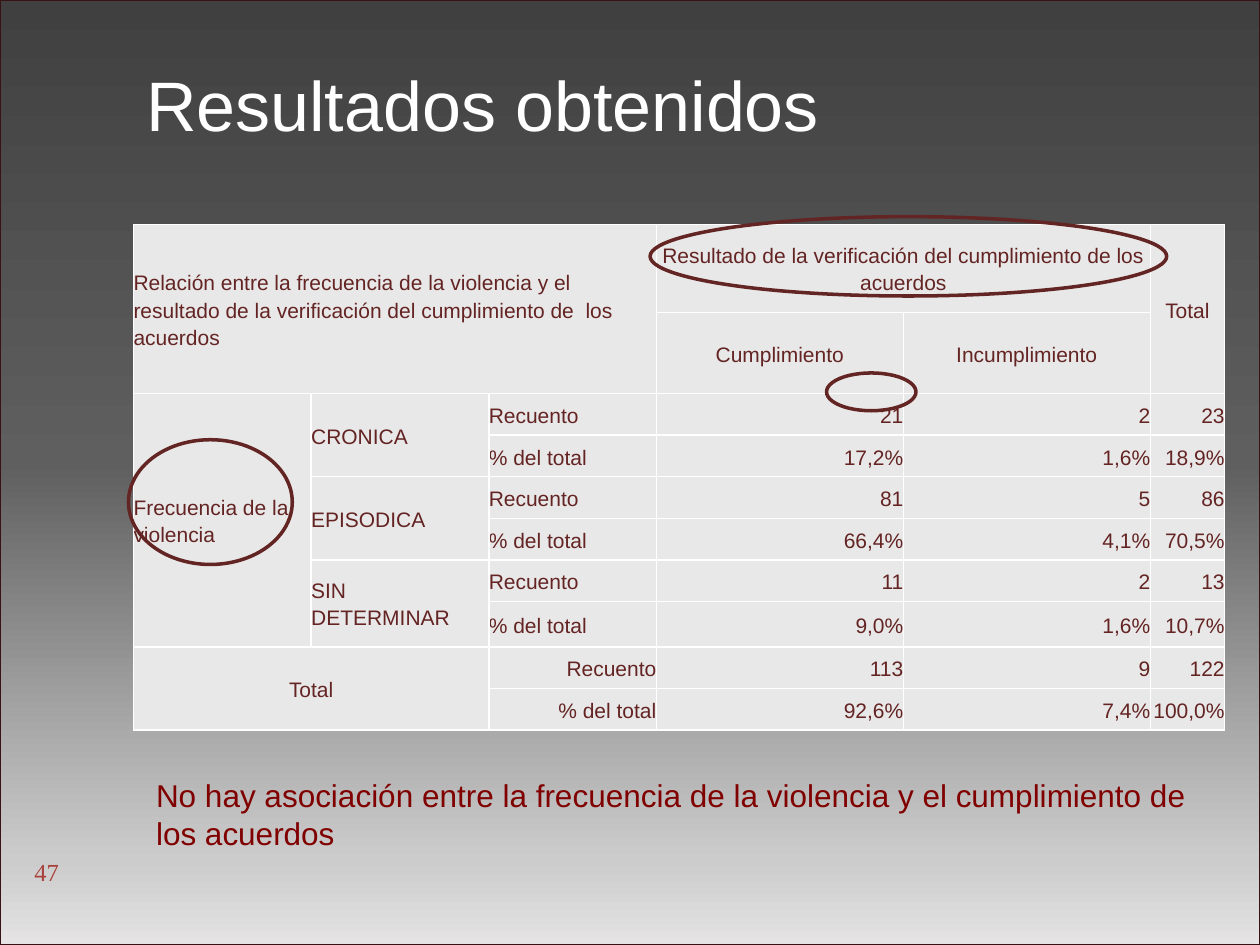
"""Builds the results slide: a cross table with circled headings and a conclusion."""
import dataclasses

import lxml.etree
import pptx
import pptx.dml.color
import pptx.enum.shapes
import pptx.enum.text
import pptx.oxml.ns
import pptx.util

ALIGN = pptx.enum.text.PP_ALIGN
ANCHOR = pptx.enum.text.MSO_ANCHOR
SHAPE = pptx.enum.shapes.MSO_SHAPE
qn = pptx.oxml.ns.qn


@dataclasses.dataclass(frozen=True)
class Theme:
    """Colours, fonts and type sizes of the slide."""
    gradient: tuple = ((0, "404040"), (49, "5F5F5F"), (91, "CCCCCC"), (100, "E5E3E3"))
    frame: str = "371413"
    cell: str = "E9E8E8"
    border: str = "FFFFFF"
    ring: str = "632523"
    title: tuple = ("Arial", 40, "FFFFFF")
    body: tuple = ("Arial", 12, "632423")
    note: tuple = ("Arial", 18, "800000")
    number: tuple = ("Times New Roman", 14, "A9423D")


THEME = Theme()
WIDTH, HEIGHT = pptx.util.Inches(10), pptx.util.Inches(7.5)

TITLE = "Resultados obtenidos"
NOTE = ("No hay asociación entre la frecuencia de la violencia "
        "y el cumplimiento de los acuerdos")
PAGE = "47"
TOPIC = ("Relación entre la frecuencia de la violencia y el resultado "
         "de la verificación del cumplimiento de  los acuerdos")
OUTCOME = "Resultado de la verificación del cumplimiento de los acuerdos"
OUTCOMES = ("Cumplimiento", "Incumplimiento")
FACTOR = "Frecuencia de la violencia"
TOTAL = "Total"
MEASURES = ("Recuento", "% del total")
GROUPS = [
    ("CRONICA", ("21", "2", "23"), ("17,2%", "1,6%", "18,9%")),
    ("EPISODICA", ("81", "5", "86"), ("66,4%", "4,1%", "70,5%")),
    ("SIN DETERMINAR", ("11", "2", "13"), ("9,0%", "1,6%", "10,7%")),
    (TOTAL, ("113", "9", "122"), ("92,6%", "7,4%", "100,0%")),
]

COLUMNS = (14.1, 14.1, 13.3, 19.6, 19.6, 5.9)
ROWS = (9.33, 6.67) + (4.4,) * 5 + (4.8,) + (4.4,) * 2
TITLE_BOX = (10.6, 5.87, 56, 10.27)
TABLE_BOX = (10.6, 23.73, 86.6, 52)
NOTE_BOX = (11.4, 81.47, 86.6, 9.47)
PAGE_BOX = (2, 89.73, 5, 6.67)
RINGS = [(65.6, 39.47, 7.1, 4), (51.6, 22.93, 41, 8.4), (10.2, 46.53, 13, 13.2)]


def rgb(value):
    return pptx.dml.color.RGBColor.from_string(value)


def share(percent, whole):
    return pptx.util.Emu(round(whole * percent / 100))


def place(box):
    return [share(v, whole) for v, whole in zip(box, (WIDTH, HEIGHT) * 2)]


def write(tf, text, style, align=ALIGN.LEFT, spacing=1.0):
    p = tf.paragraphs[0]
    p.alignment, p.line_spacing = align, spacing
    r = p.add_run()
    r.text = text
    name, size, colour = style
    r.font.name, r.font.size = name, pptx.util.Pt(size)
    r.font.color.rgb = rgb(colour)


def clear_margins(holder):
    holder.margin_left = holder.margin_right = 0
    holder.margin_top = holder.margin_bottom = 0


def add_outline(s, kind, box, colour, weight):
    sp = s.shapes.add_shape(kind, *place(box))
    sp.shadow.inherit = False
    sp.fill.background()
    sp.line.color.rgb = rgb(colour)
    sp.line.width = pptx.util.Pt(weight)
    return sp


def add_backdrop(s):
    sp = add_outline(s, SHAPE.RECTANGLE, (0, 0, 100, 100), THEME.frame, 1)
    sp.fill.gradient()
    sp.fill.gradient_angle = 270
    stops = sp._element.spPr.find(qn("a:gradFill")).find(qn("a:gsLst"))
    stops.clear()
    for position, colour in THEME.gradient:
        stop = lxml.etree.SubElement(stops, qn("a:gs"), pos=str(position * 1000))
        lxml.etree.SubElement(stop, qn("a:srgbClr"), val=colour)
    s.shapes._spTree.insert(2, sp._element)


def add_title(s):
    sp = s.shapes.title
    sp.left, sp.top, sp.width, sp.height = place(TITLE_BOX)
    tf = sp.text_frame
    tf.word_wrap = False
    tf.auto_size = pptx.enum.text.MSO_AUTO_SIZE.NONE
    tf.vertical_anchor = ANCHOR.TOP
    write(tf, TITLE, THEME.title)


def table_entries():
    """Lists each cell as row, column, row span, column span, text, alignment."""
    left, centre, right = ALIGN.LEFT, ALIGN.CENTER, ALIGN.RIGHT
    entries = [(0, 0, 2, 3, TOPIC, left), (0, 3, 1, 2, OUTCOME, centre),
               (0, 5, 2, 1, TOTAL, centre), (2, 0, 6, 1, FACTOR, left)]
    entries += [(1, 3 + i, 1, 1, text, centre) for i, text in enumerate(OUTCOMES)]
    for i, (group, *lines) in enumerate(GROUPS):
        top, is_total = 2 + 2 * i, group == TOTAL
        entries.append((top, 0, 2, 2, group, centre) if is_total
                       else (top, 1, 2, 1, group, left))
        for j, (measure, values) in enumerate(zip(MEASURES, lines)):
            entries.append((top + j, 2, 1, 1, measure, right if is_total else left))
            entries += [(top + j, 3 + k, 1, 1, v, right) for k, v in enumerate(values)]
    return entries


def format_cell(cell):
    tcPr = cell._tc.get_or_add_tcPr()
    for side in ("a:lnL", "a:lnR", "a:lnT", "a:lnB"):
        ln = lxml.etree.SubElement(tcPr, qn(side), w=str(pptx.util.Pt(1)))
        fill = lxml.etree.SubElement(ln, qn("a:solidFill"))
        lxml.etree.SubElement(fill, qn("a:srgbClr"), val=THEME.border)
    cell.fill.solid()
    cell.fill.fore_color.rgb = rgb(THEME.cell)
    cell.vertical_anchor = ANCHOR.MIDDLE
    clear_margins(cell)


def add_results(s):
    table = s.shapes.add_table(len(ROWS), len(COLUMNS), *place(TABLE_BOX)).table
    for column, width in zip(table.columns, COLUMNS):
        column.width = share(width, WIDTH)
    for row, height in zip(table.rows, ROWS):
        row.height = share(height, HEIGHT)
    for cell in table.iter_cells():
        format_cell(cell)
    for row, col, down, across, text, align in table_entries():
        cell = table.cell(row, col)
        if down * across > 1:
            cell.merge(table.cell(row + down - 1, col + across - 1))
        write(cell.text_frame, text, THEME.body, align, 1.15)


def add_page_number(s):
    sp = add_outline(s, SHAPE.OVAL, PAGE_BOX, THEME.ring, 1)
    sp.line.fill.background()
    tf = sp.text_frame
    clear_margins(tf)
    tf.vertical_anchor = ANCHOR.TOP
    write(tf, PAGE, THEME.number)


def main():
    prs = pptx.Presentation()
    prs.slide_width, prs.slide_height = WIDTH, HEIGHT
    s = prs.slides.add_slide(prs.slide_layouts[5])
    add_backdrop(s)
    add_title(s)
    add_page_number(s)
    add_results(s)
    for box in RINGS:
        add_outline(s, SHAPE.OVAL, box, THEME.ring, 2)
    tf = s.shapes.add_textbox(*place(NOTE_BOX)).text_frame
    tf.word_wrap = True
    write(tf, NOTE, THEME.note)
    prs.save("out.pptx")


if __name__ == "__main__":
    main()
